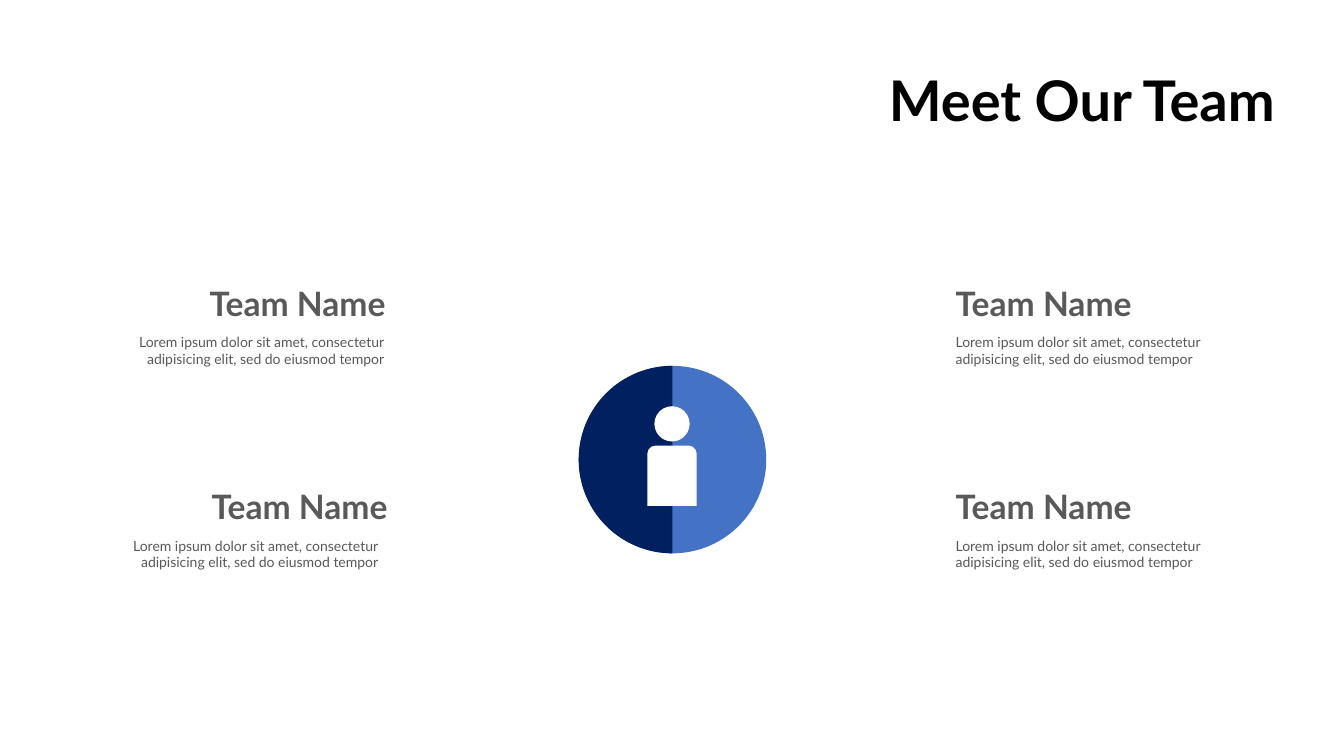
import math

import pptx
import pptx.dml.color
import pptx.enum.shapes
import pptx.enum.text
import pptx.util
from pptx.util import Inches

SHAPE = pptx.enum.shapes.MSO_SHAPE
ALIGN = pptx.enum.text.PP_ALIGN

FONT = "Lato"
BLACK, GREY, WHITE = "000000", "595959", "FFFFFF"
NAVY, BLUE = "002060", "4472C4"

BIO = ["Lorem ipsum dolor sit amet, consectetur",
       "adipisicing elit, sed do eiusmod tempor"]
# Name left, name top, bio left, bio top, bio alignment
MEMBERS = [
    (9.38, 2.76, 9.38, 3.26, ALIGN.LEFT),
    (9.38, 4.77, 9.38, 5.28, ALIGN.LEFT),
    (2.00, 4.77, 0.79, 5.28, ALIGN.RIGHT),
    (1.98, 2.76, 0.85, 3.26, ALIGN.RIGHT),
]


def rgb(color):
    return pptx.dml.color.RGBColor.from_string(color)


def paint(shape, color):
    shape.shadow.inherit = False
    shape.fill.solid()
    shape.fill.fore_color.rgb = rgb(color)
    shape.line.fill.background()


def add_text(slide, box, lines, size, color, bold=False, align=ALIGN.LEFT, wrap=False):
    frame = slide.shapes.add_textbox(*map(Inches, box)).text_frame
    frame.word_wrap = wrap
    frame.auto_size = pptx.enum.text.MSO_AUTO_SIZE.SHAPE_TO_FIT_TEXT
    frame.text = "\n".join(lines)
    for paragraph in frame.paragraphs:
        paragraph.alignment = align
        for run in paragraph.runs:
            run.font.name = FONT
            run.font.size = pptx.util.Pt(size)
            run.font.bold = bold
            run.font.color.rgb = rgb(color)


def add_preset(slide, kind, box, color):
    shape = slide.shapes.add_shape(kind, *map(Inches, box))
    paint(shape, color)
    return shape


def add_left_half_disc(slide, center_x, center_y, radius, color, steps=90):
    arc = []
    for step in range(steps + 1):
        angle = math.pi * (0.5 + step / steps)
        arc.append((Inches(center_x + radius * math.cos(angle)),
                    Inches(center_y + radius * math.sin(angle))))
    builder = slide.shapes.build_freeform(*arc[0])
    builder.add_line_segments(arc[1:], close=True)
    paint(builder.convert_to_shape(), color)


def add_person_badge(slide, center_x, center_y, radius):
    add_preset(slide, SHAPE.OVAL,
               (center_x - radius, center_y - radius, 2 * radius, 2 * radius), BLUE)
    add_left_half_disc(slide, center_x, center_y, radius, NAVY)
    add_preset(slide, SHAPE.OVAL, (6.49, 4.03, 0.35, 0.35), WHITE)
    body = add_preset(slide, SHAPE.ROUND_2_SAME_RECTANGLE, (6.42, 4.42, 0.49, 0.6), WHITE)
    body.adjustments[0] = 0.17


def add_member(slide, name_left, name_top, bio_left, bio_top, align):
    add_text(slide, (name_left, name_top, 1.97, 0.5), ["Team Name"], 24, GREY, bold=True)
    ending = " " if align == ALIGN.RIGHT else ""
    add_text(slide, (bio_left, bio_top, 3.09, 0.44), [line + ending for line in BIO],
             10, GREY, align=align, wrap=True)


def main():
    deck = pptx.Presentation()
    deck.slide_width, deck.slide_height = Inches(13.33), Inches(7.5)
    slide = deck.slides.add_slide(deck.slide_layouts[6])
    add_text(slide, (8.68, 0.6, 4.1, 0.77), ["Meet Our Team"], 40, BLACK,
             bold=True, align=ALIGN.CENTER)
    add_person_badge(slide, 6.67, 4.56, 0.93)
    for member in MEMBERS:
        add_member(slide, *member)
    deck.save("out.pptx")


if __name__ == "__main__":
    main()
